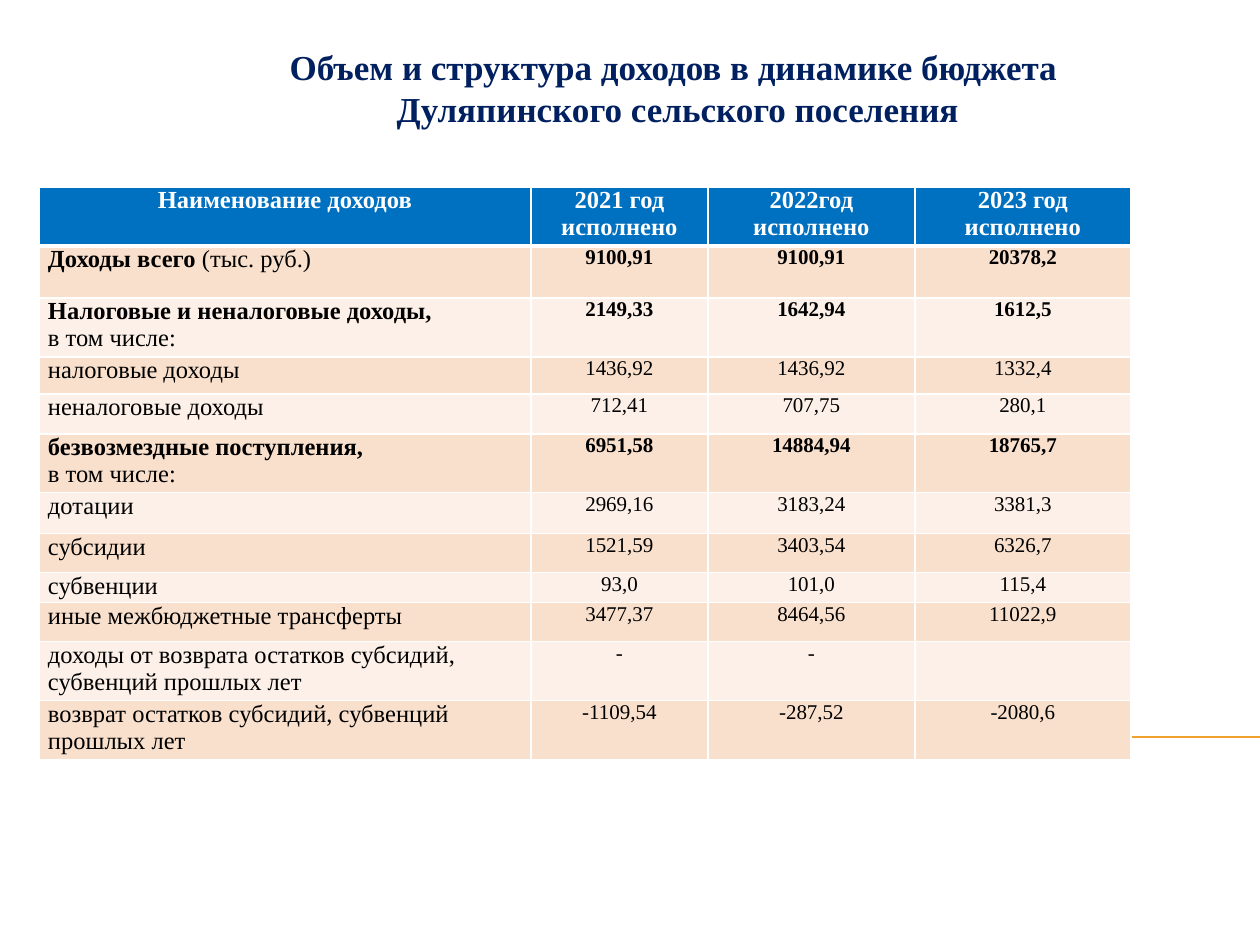
from lxml.etree import SubElement
from pptx import Presentation
from pptx.dml.color import RGBColor
from pptx.enum.shapes import MSO_CONNECTOR
from pptx.enum.text import MSO_AUTO_SIZE, PP_ALIGN
from pptx.oxml import parse_xml
from pptx.oxml.ns import nsdecls, qn
from pptx.util import Pt

PX = 914400 // 126
COLORS = {"navy": "002060", "head": "0070C0", "dark": "F9E0CD", "light": "FCF0E8",
          "white": "FFFFFF", "black": "000000", "rule": "F0A22E"}
FONT = "Times New Roman"
TITLE = ["Объем и структура доходов в динамике бюджета", " Дуляпинского сельского поселения"]
HEAD = ["Наименование доходов", "2021 год\nисполнено", "2022год\nисполнено", "2023 год исполнено"]
ROWS = [
    (52, "Доходы всего |(тыс. руб.)", "9100,91", "9100,91", "20378,2"),
    (59, "Налоговые и неналоговые доходы,|\nв том числе:", "2149,33", "1642,94", "1612,5"),
    (37, "налоговые доходы", "1436,92", "1436,92", "1332,4"),
    (40, "неналоговые доходы", "712,41", "707,75", "280,1"),
    (58, "безвозмездные поступления,|\nв том числе:", "6951,58", "14884,94", "18765,7"),
    (41, "дотации", "2969,16", "3183,24", "3381,3"),
    (39, "субсидии", "1521,59", "3403,54", "6326,7"),
    (30, "субвенции", "93,0", "101,0", "115,4"),
    (39, "иные межбюджетные трансферты", "3477,37", "8464,56", "11022,9"),
    (59, "доходы от возврата остатков субсидий, субвенций прошлых лет", "-", "-", ""),
    (59, "возврат остатков субсидий, субвенций прошлых лет", "-1109,54", "-287,52", "-2080,6"),
]
COLS = [492, 177, 207, 216]
HEAD_H = 58


def scale(*vals):
    """Turn px lengths into EMU."""
    return [val * PX for val in vals]


def rgb(name):
    """Look up a named colour."""
    return RGBColor.from_string(COLORS[name])


def write(frame, lines, align, size, color):
    """Fill a text frame with lines, each a list of (text, bold) runs."""
    for pos, line in enumerate(lines):
        para = frame.paragraphs[0] if pos == 0 else frame.add_paragraph()
        para.alignment = align
        para.font.size = Pt(size)
        for text, bold in line:
            run = para.add_run()
            run.text = text
            form = {"name": FONT, "size": Pt(size), "bold": bold}
            for key, val in form.items():
                setattr(run.font, key, val)
            run.font.color.rgb = rgb(color)


def border(cell, top, low):
    """Draw white borders round a cell with the given top and bottom widths."""
    props = cell._tc.get_or_add_tcPr()
    for pos, (side, width) in enumerate([("L", 1), ("R", 1), ("T", top), ("B", low)]):
        line = parse_xml(
            f'<a:ln{side} {nsdecls("a")} w="{Pt(width)}"><a:solidFill>'
            f'<a:srgbClr val="{COLORS["white"]}"/></a:solidFill></a:ln{side}>')
        props.insert(pos, line)


def dress(cell, fill, top=1, low=1):
    """Set the margins, fill and borders of a cell."""
    form = {"margin_left": 9 * PX, "margin_right": 9 * PX, "margin_top": 0, "margin_bottom": 0}
    for key, val in form.items():
        setattr(cell, key, val)
    cell.fill.solid()
    cell.fill.fore_color.rgb = rgb(fill)
    border(cell, top, low)


def split(label):
    """Split a label into lines of runs, bold before the bar."""
    bold, bar, plain = label.partition("|")
    if not bar:
        return [[(label, False)]]
    if plain.startswith("\n"):
        return [[(bold, True)], [(plain[1:], False)]]
    return [[(bold, True), (plain, False)]]


def rule(slide, left, top, width):
    """Draw the thin rule across the slide."""
    line = slide.shapes.add_connector(
        MSO_CONNECTOR.STRAIGHT, *scale(left, top, left + width, top))
    line.line.color.rgb = rgb("rule")
    line.line.width = Pt(0.75)
    SubElement(line._element.spPr, qn("a:effectLst"))


def title(slide, left, top, width, height):
    """Place the centred heading."""
    frame = slide.shapes.add_textbox(*scale(left, top, width, height)).text_frame
    form = {"word_wrap": True, "auto_size": MSO_AUTO_SIZE.SHAPE_TO_FIT_TEXT}
    for key, val in form.items():
        setattr(frame, key, val)
    write(frame, [[(line, True)] for line in TITLE], PP_ALIGN.CENTER, 20, "navy")


def income(slide, left, top):
    """Place the table of income by year."""
    highs = [HEAD_H] + [row[0] for row in ROWS]
    box = scale(left, top, sum(COLS), sum(highs))
    table = slide.shapes.add_table(len(highs), len(COLS), *box).table
    for col, width in zip(table.columns, COLS):
        col.width = width * PX
    for row, high in zip(table.rows, highs):
        row.height = high * PX
    for col, text in enumerate(HEAD):
        cell = table.cell(0, col)
        dress(cell, "head", low=3)
        lines = [[(line, True)] for line in text.split("\n")]
        write(cell.text_frame, lines, PP_ALIGN.CENTER, 14, "white")
    for num, (_, label, *vals) in enumerate(ROWS, 1):
        cells = [table.cell(num, col) for col in range(len(COLS))]
        for cell in cells:
            dress(cell, "dark" if num % 2 else "light", top=3 if num == 1 else 1)
        write(cells[0].text_frame, split(label), PP_ALIGN.LEFT, 14, "black")
        for cell, val in zip(cells[1:], vals):
            runs = [(val, "|" in label)] if val else []
            write(cell.text_frame, [runs], PP_ALIGN.CENTER, 12, "black")


def main():
    """Build and save the slide."""
    deck = Presentation()
    deck.slide_width, deck.slide_height = scale(1260, 945)
    slide = deck.slides.add_slide(deck.slide_layouts[6])
    rule(slide, 71, 737, 1189)
    title(slide, 147, 39, 1053, 97)
    income(slide, 39, 187)
    deck.save("out.pptx")


if __name__ == "__main__":
    main()
